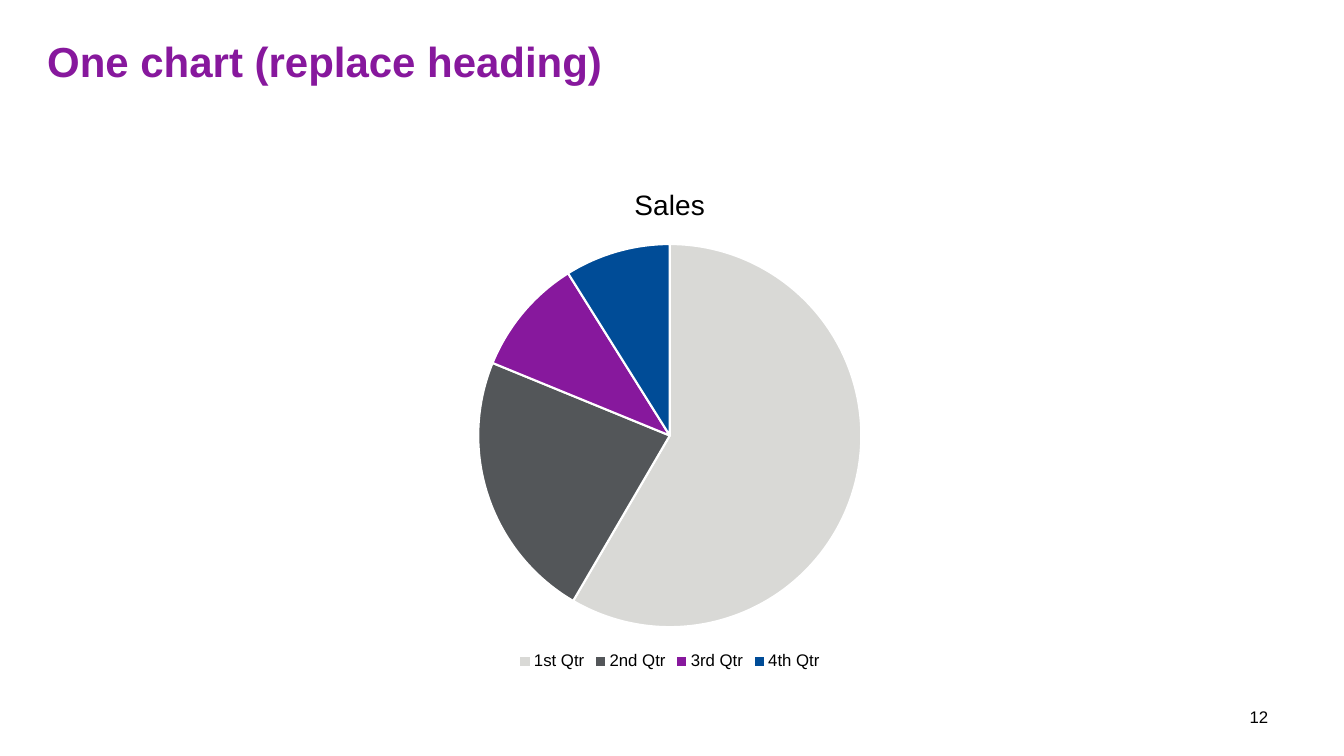
"""Build a slide with a heading, one pie chart of sales and a page number."""
from dataclasses import dataclass
from typing import Any

import pptx
import pptx.chart.data
import pptx.dml.color
import pptx.enum.chart
import pptx.enum.text
import pptx.util

Cm = pptx.util.Cm
ALIGN = pptx.enum.text.PP_ALIGN
ANCHOR = pptx.enum.text.MSO_ANCHOR
COLORS = {
    "black": "000000",
    "white": "FFFFFF",
    "purple": "87189D",
    "silver": "D9D9D6",
    "slate": "535659",
    "blue": "004C97",
}


@dataclass
class Label:
    text: str
    box: tuple[float, float, float, float]
    size: int
    color: str
    bold: bool
    align: Any
    frame: dict[str, Any]


@dataclass
class Slice:
    name: str
    value: int
    color: str


LABELS = [
    Label("12", (30.91, 17.55, 1.63, 1.02), 12, "black", False, ALIGN.CENTER,
          {"vertical_anchor": ANCHOR.MIDDLE}),
    Label("One chart (replace heading)", (1.19, 1.04, 31.34, 2.18), 30, "purple", True, ALIGN.LEFT,
          {"vertical_anchor": ANCHOR.TOP, "margin_left": 0, "margin_top": 0,
           "margin_right": 0, "margin_bottom": 0}),
]
SLICES = [
    Slice("1st Qtr", 59, "silver"),
    Slice("2nd Qtr", 23, "slate"),
    Slice("3rd Qtr", 10, "purple"),
    Slice("4th Qtr", 9, "blue"),
]


def rgb(color: str) -> pptx.dml.color.RGBColor:
    return pptx.dml.color.RGBColor.from_string(COLORS[color])


def apply(target: Any, values: dict[str, Any]) -> None:
    for key, value in values.items():
        setattr(target, key, value)


def style(font: Any, size: int, color: str = "black", bold: bool = False) -> None:
    apply(font, {"name": "Arial", "size": pptx.util.Pt(size), "bold": bold})
    font.color.rgb = rgb(color)


def add_label(slide: Any, label: Label) -> None:
    frame = slide.shapes.add_textbox(*map(Cm, label.box)).text_frame
    apply(frame, {"word_wrap": True, **label.frame})
    line = frame.paragraphs[0]
    apply(line, {"alignment": label.align, "line_spacing": 0.9 if label.bold else 1.0})
    run = line.add_run()
    run.text = label.text
    style(run.font, label.size, label.color, label.bold)


def add_pie(slide: Any, title: str, slices: list[Slice]) -> None:
    data = pptx.chart.data.CategoryChartData()
    data.categories = [part.name for part in slices]
    data.add_series("Series 1", [part.value for part in slices])
    chart = slide.shapes.add_chart(
        pptx.enum.chart.XL_CHART_TYPE.PIE,
        Cm(5.13), Cm(4.19), Cm(23.5), Cm(12.8), data).chart
    style(chart.font, 10)
    apply(chart, {"has_title": True, "has_legend": True})
    head = chart.chart_title.text_frame.paragraphs[0].add_run()
    head.text = title
    style(head.font, 20)
    apply(chart.legend, {"position": pptx.enum.chart.XL_LEGEND_POSITION.BOTTOM,
                         "include_in_layout": False})
    style(chart.legend.font, 12)
    plot = chart.plots[0]
    plot.vary_by_categories = True
    for index, part in enumerate(slices):
        look = plot.series[0].points[index].format
        look.fill.solid()
        look.fill.fore_color.rgb = rgb(part.color)
        look.line.color.rgb = rgb("white")
        look.line.width = pptx.util.Pt(1.5)


def main() -> None:
    deck = pptx.Presentation()
    apply(deck, {"slide_width": Cm(33.87), "slide_height": Cm(19.05)})
    slide = deck.slides.add_slide(deck.slide_layouts[6])
    for label in LABELS:
        add_label(slide, label)
    add_pie(slide, "Sales", SLICES)
    deck.save("out.pptx")


if __name__ == "__main__":
    main()
